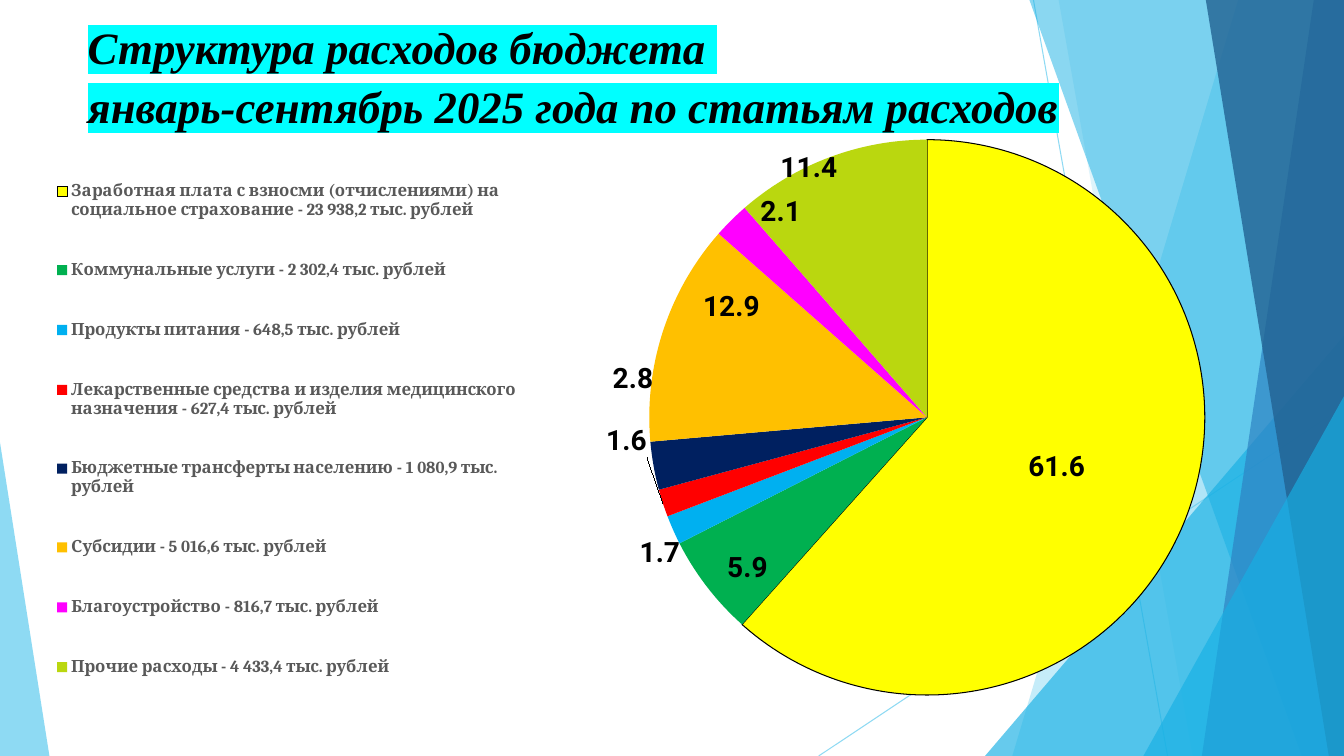
from lxml import etree
from pptx import Presentation
from pptx.chart.data import CategoryChartData
from pptx.dml.color import RGBColor
from pptx.enum.chart import XL_CHART_TYPE, XL_LABEL_POSITION, XL_LEGEND_POSITION
from pptx.enum.shapes import MSO_CONNECTOR, MSO_SHAPE
from pptx.enum.text import MSO_ANCHOR, MSO_AUTO_SIZE, PP_ALIGN
from pptx.oxml.ns import qn
from pptx.util import Inches, Pt

PIE = XL_CHART_TYPE.PIE
CENTER = XL_LABEL_POSITION.CENTER
LEGEND_BOTTOM = XL_LEGEND_POSITION.BOTTOM
STRAIGHT = MSO_CONNECTOR.STRAIGHT
TRIANGLE = MSO_SHAPE.ISOSCELES_TRIANGLE
TOP = MSO_ANCHOR.TOP
LEFT = PP_ALIGN.LEFT
NO_AUTOFIT = MSO_AUTO_SIZE.NONE

WIDTH, HEIGHT = 13.33, 7.5
COLORS = {
    "sky": "5FCBEF", "azure": "17B0E4", "blue": "2E83C3", "navy": "226292",
    "black": "000000", "gray": "595959", "highlight": "00FFFF",
}
TITLE_BOX = (0.77, 0.1, 12.4, 1.18)
TITLE_LINES = ("Структура расходов бюджета ", "январь-сентябрь 2025 года по статьям расходов")
CHART_BOX = (0.14, 1.21, 13.19, 6.29)

# Category, share in percent, slice colour, label offset from the slice centre in inches
EXPENSES = (
    ("Заработная плата с взносми (отчислениями) на социальное страхование - 23 938,2 тыс. рублей",
     61.6, "FFFF00", None),
    ("Коммунальные услуги - 2 302,4 тыс. рублей", 5.9, "00B050", (-0.69, 0.65)),
    ("Продукты питания - 648,5 тыс. рублей", 1.7, "00B0F0", (-1.39, 0.79)),
    ("Лекарственные средства и изделия медицинского назначения - 627,4 тыс. рублей",
     1.6, "FF0000", (-1.67, -0.19)),
    ("Бюджетные трансферты населению - 1 080,9 тыс. рублей", 2.8, "002060", (-1.56, -0.62)),
    ("Субсидии - 5 016,6 тыс. рублей", 12.9, "FFC000", (-0.63, -0.66)),
    ("Благоустройство - 816,7 тыс. рублей", 2.1, "FF00FF", (-0.48, -1.06)),
    ("Прочие расходы - 4 433,4 тыс. рублей", 11.4, "BAD70F", (-0.69, -1.18)),
)


def rgb(name):
    return RGBColor.from_string(COLORS.get(name, name))


def set_opacity(fill_parent, percent):
    color = fill_parent.find(".//" + qn("a:srgbClr"))
    etree.SubElement(color, qn("a:alpha")).set("val", str(percent * 1000))


def style_font(font, name, size, color, bold=False, italic=False):
    font.name, font.size, font.bold, font.italic = name, Pt(size), bold, italic
    font.color.rgb = rgb(color)


def add_span(para, text, highlight=None, **style):
    span = para.add_run()
    span.text = text
    style_font(span.font, **style)
    if highlight:
        mark = etree.Element(qn("a:highlight"))
        etree.SubElement(mark, qn("a:srgbClr")).set("val", COLORS[highlight])
        span.font._element.find(qn("a:solidFill")).addnext(mark)


def paint(shape, color, opacity):
    shape.shadow.inherit = False
    shape.fill.solid()
    shape.fill.fore_color.rgb = rgb(color)
    set_opacity(shape._element.spPr, opacity)
    shape.line.fill.background()


def add_ray(shapes, *ends):
    ray = shapes.add_connector(STRAIGHT, *map(Inches, ends))
    ray.line.color.rgb = rgb("sky")
    ray.line.width = Pt(0.75)
    set_opacity(ray._element.spPr, 70)
    etree.SubElement(ray._element.spPr, qn("a:effectLst"))


def add_panel(shapes, top_x, bottom_x, color, opacity):
    """Fill from a slanted left edge to the right edge of the slide."""
    builder = shapes.build_freeform(Inches(top_x), 0)
    corners = ((WIDTH, 0), (WIDTH, HEIGHT), (bottom_x, HEIGHT))
    builder.add_line_segments([(Inches(x), Inches(y)) for x, y in corners])
    paint(builder.convert_to_shape(), color, opacity)


def add_corner(shapes, left, top, width, apex, color, opacity):
    """Stand a right triangle on the bottom edge of the slide."""
    corner = shapes.add_shape(TRIANGLE, *map(Inches, (left, top, width, HEIGHT - top)))
    corner.adjustments[0] = apex
    paint(corner, color, opacity)


def add_backdrop(shapes):
    add_ray(shapes, 10.25, 0, 11.58, HEIGHT)
    add_ray(shapes, WIDTH, 4.03, 8.12, HEIGHT)
    add_panel(shapes, 12.28, 10.04, "sky", 36)
    add_panel(shapes, 10.5, 11.83, "sky", 20)
    add_corner(shapes, 9.77, 3.33, 3.56, 1, "azure", 66)
    add_panel(shapes, 10.21, 12.91, "azure", 50)
    add_panel(shapes, 13.03, 11.92, "blue", 70)
    add_panel(shapes, 11.96, 13.18, "navy", 80)
    add_corner(shapes, 11.34, 3.93, 1.99, 1, "azure", 66)
    add_corner(shapes, 0, 4.39, 0.49, 0, "sky", 70)


def manual_layout(**settings):
    layout = etree.Element(qn("c:layout"))
    manual = etree.SubElement(layout, qn("c:manualLayout"))
    for tag, value in settings.items():
        etree.SubElement(manual, qn("c:" + tag)).set("val", str(value))
    return layout


def place_part(part, x, y, w, h, **target):
    """Put a chart part at shares of the chart's size."""
    for old in part.findall(qn("c:layout")):
        part.remove(old)
    layout = manual_layout(**target, xMode="edge", yMode="edge", x=x, y=y, w=w, h=h)
    if part.tag == qn("c:legend"):
        part.find(qn("c:legendPos")).addnext(layout)
    else:
        part.insert(0, layout)


def add_expense_pie(shapes, box):
    data = CategoryChartData(number_format="0.0")
    data.categories = [name for name, *_ in EXPENSES]
    data.add_series("Series 1", [share for _, share, *_ in EXPENSES])
    chart = shapes.add_chart(PIE, *map(Inches, box), data).chart
    chart.has_title = False
    style_font(chart.font, "Roboto", 10, "black")
    chart.has_legend = True
    legend = chart.legend
    legend.position = LEGEND_BOTTOM
    legend.include_in_layout = False
    style_font(legend.font, "Cambria", 12, "gray", bold=True)
    place_part(legend._element, 0.02, 0.03, 0.37, 0.91)
    plot = chart.plots[0]
    plot.vary_by_categories = True
    place_part(plot._element.getparent(), 0.373, 0.028, 0.627, 0.876, layoutTarget="inner")

    label_style = {"name": "Roboto", "size": 20, "color": "black", "bold": True}
    series = plot.series[0]
    labels = series.data_labels
    labels.show_value = True
    labels.number_format, labels.number_format_is_linked = "0.0", False
    labels.position = CENTER
    style_font(labels.font, **label_style)
    for index, (_, _, color, offset) in enumerate(EXPENSES):
        point = series.points[index]
        point.format.fill.solid()
        point.format.fill.fore_color.rgb = rgb(color)
        if offset is None:
            point.format.line.color.rgb = rgb("black")
            point.format.line.width = Pt(0.75)
            continue
        point.format.line.fill.background()
        label = point.data_label
        style_font(label.font, **label_style)
        label.position = CENTER
        shift = manual_layout(x=round(offset[0] / box[2], 4), y=round(offset[1] / box[3], 4))
        label._dLbl.find(qn("c:idx")).addnext(shift)


def place_title(title, box):
    title.left, title.top, title.width, title.height = map(Inches, box)
    frame = title.text_frame
    frame.word_wrap, frame.auto_size, frame.vertical_anchor = True, NO_AUTOFIT, TOP
    for index, text in enumerate(TITLE_LINES):
        para = frame.add_paragraph() if index else frame.paragraphs[0]
        para.alignment, para.line_spacing = LEFT, 1.09
        para.space_before = Pt(0)
        add_span(para, text, highlight="highlight", name="Times New Roman", size=32,
                 color="black", bold=True, italic=True)


def main():
    deck = Presentation()
    deck.slide_width, deck.slide_height = Inches(WIDTH), Inches(HEIGHT)
    page = deck.slides.add_slide(deck.slide_layouts[5])
    add_backdrop(page.shapes)
    add_expense_pie(page.shapes, CHART_BOX)
    place_title(page.shapes.title, TITLE_BOX)
    page.shapes._spTree.append(page.shapes.title._element)
    deck.save("out.pptx")


if __name__ == "__main__":
    main()
